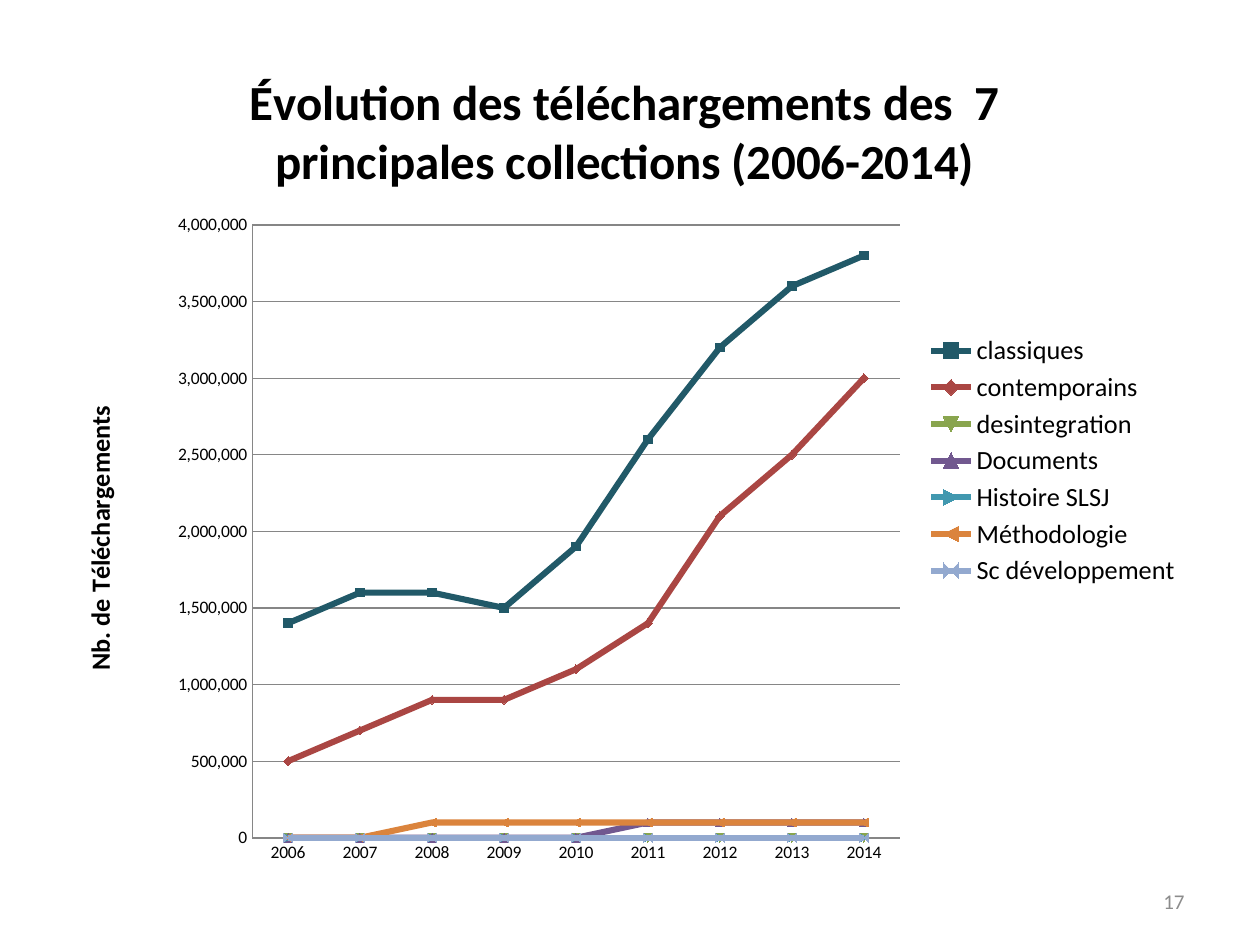
from lxml import etree
from pptx import Presentation
from pptx.chart.data import CategoryChartData
from pptx.dml.color import RGBColor
from pptx.enum import chart as ch, text as tx
from pptx.oxml import parse_xml
from pptx.oxml.ns import qn
from pptx.util import Pt

PX = 914400 // 126
NS = "http://schemas.openxmlformats.org/drawingml/2006/chart"


class Theme:
    font = "Calibri"
    ink, grey, rule = "000000", "8C8C8C", "868686"
    title, label, tick, page = 28, 15, 10, 12
    line, mark, thin = 3.5, 5, 0.25


YEARS = range(2006, 2015)
# Name, colour, downloads in hundreds of thousands
LINES = [
    ("classiques", "215968", [14, 16, 16, 15, 19, 26, 32, 36, 38]),
    ("contemporains", "AA4643", [5, 7, 9, 9, 11, 14, 21, 25, 30]),
    ("desintegration", "89A54E", [0] * 9),
    ("Documents", "71588F", [0] * 5 + [1] * 4),
    ("Histoire SLSJ", "4198AF", [0] * 9),
    ("Méthodologie", "DB843D", [0] * 2 + [1] * 7),
    ("Sc développement", "93A9CF", [0] * 9),
]


def rgb(code):
    return RGBColor.from_string(code)


def style(font, size, color=Theme.ink, bold=False):
    font.name, font.size, font.bold = Theme.font, Pt(size), bold
    font.color.rgb = rgb(color)


def stroke(line, color, width):
    line.color.rgb = rgb(color)
    line.width = Pt(width)


def place(part, box, x, y, w=None, h=None, inner=False):
    """Fix a chart part at px offsets within the chart box."""
    for old in part.findall(qn("c:layout")):
        part.remove(old)
    rows = [("layoutTarget", "inner")] if inner else []
    rows += [("xMode", "edge"), ("yMode", "edge")]
    sizes = (("x", x, box[2]), ("y", y, box[3]), ("w", w, box[2]), ("h", h, box[3]))
    rows += [(k, round(v / full, 4)) for k, v, full in sizes if v is not None]
    body = "".join(f'<c:{k} val="{v}"/>' for k, v in rows)
    node = parse_xml(f'<c:layout xmlns:c="{NS}"><c:manualLayout>{body}'
                     '</c:manualLayout></c:layout>')
    # The layout follows the text or legend position, or leads the plot area
    lead = [n for n in part if etree.QName(n).localname in ("tx", "legendPos")]
    part.insert(len(lead), node)


def head(owner, words, size):
    frame = owner.text_frame
    frame.text = words
    style(frame.paragraphs[0].runs[0].font, size, bold=True)


def graph(slide, box):
    data = CategoryChartData(number_format="#,##0")
    data.categories = [str(year) for year in YEARS]
    for name, _, vals in LINES:
        data.add_series(name, [v * 100000 for v in vals])
    area = [v * PX for v in box]
    chart = slide.shapes.add_chart(ch.XL_CHART_TYPE.LINE_MARKERS, *area, data).chart
    style(chart.font, Theme.tick)

    # Series
    for row, (_, color, _) in zip(chart.plots[0].series, LINES):
        row.smooth = False
        stroke(row.format.line, color, Theme.line)
        row.marker.size = Theme.mark
        fill = row.marker.format.fill
        fill.solid()
        fill.fore_color.rgb = rgb(color)
        stroke(row.marker.format.line, color, 0.75)

    # Axes
    cat, val = chart.category_axis, chart.value_axis
    for axis in (cat, val):
        axis.major_tick_mark = axis.minor_tick_mark = ch.XL_TICK_MARK.NONE
        stroke(axis.format.line, Theme.rule, Theme.thin)
        style(axis.tick_labels.font, Theme.tick)
    val.minimum_scale, val.maximum_scale, val.major_unit = 0, 4000000, 500000
    val.tick_labels.number_format = "#,##0"
    val.tick_labels.number_format_is_linked = False
    stroke(val.major_gridlines.format.line, Theme.rule, 0.75)

    # Titles and legend
    head(chart.chart_title, "Évolution des téléchargements des  7 "
         "principales collections (2006-2014)", Theme.title)
    chart.chart_title.include_in_layout = False
    head(val.axis_title, "Nb. de Téléchargements", Theme.label)
    turn = val.axis_title.text_frame._txBody.bodyPr
    turn.set("rot", "-5400000")
    turn.set("vert", "horz")
    chart.has_legend = True
    chart.legend.position = ch.XL_LEGEND_POSITION.RIGHT
    chart.legend.include_in_layout = False
    style(chart.legend.font, Theme.label)

    # Positions
    root = chart._chartSpace.chart
    place(root.plotArea, box, 198, 181, 648, 613, inner=True)
    place(root.find(qn("c:title")), box, 187, 16)
    place(val.axis_title._element, box, 23, 357)
    place(root.find(qn("c:legend")), box, 871, 286, 256, 262)


def page(slide, box, num):
    frame = slide.shapes.add_textbox(*[v * PX for v in box]).text_frame
    frame.word_wrap = True
    frame.vertical_anchor = tx.MSO_ANCHOR.MIDDLE
    frame.text = num
    para = frame.paragraphs[0]
    para.alignment = tx.PP_ALIGN.RIGHT
    style(para.runs[0].font, Theme.page, Theme.grey)


def main():
    deck = Presentation()
    deck.slide_width, deck.slide_height = 1260 * PX, 945 * PX
    slide = deck.slides.add_slide(deck.slide_layouts[6])
    graph(slide, (54, 44, 1140, 834))
    page(slide, (903, 876, 294, 50), "17")
    deck.save("out.pptx")


if __name__ == "__main__":
    main()
